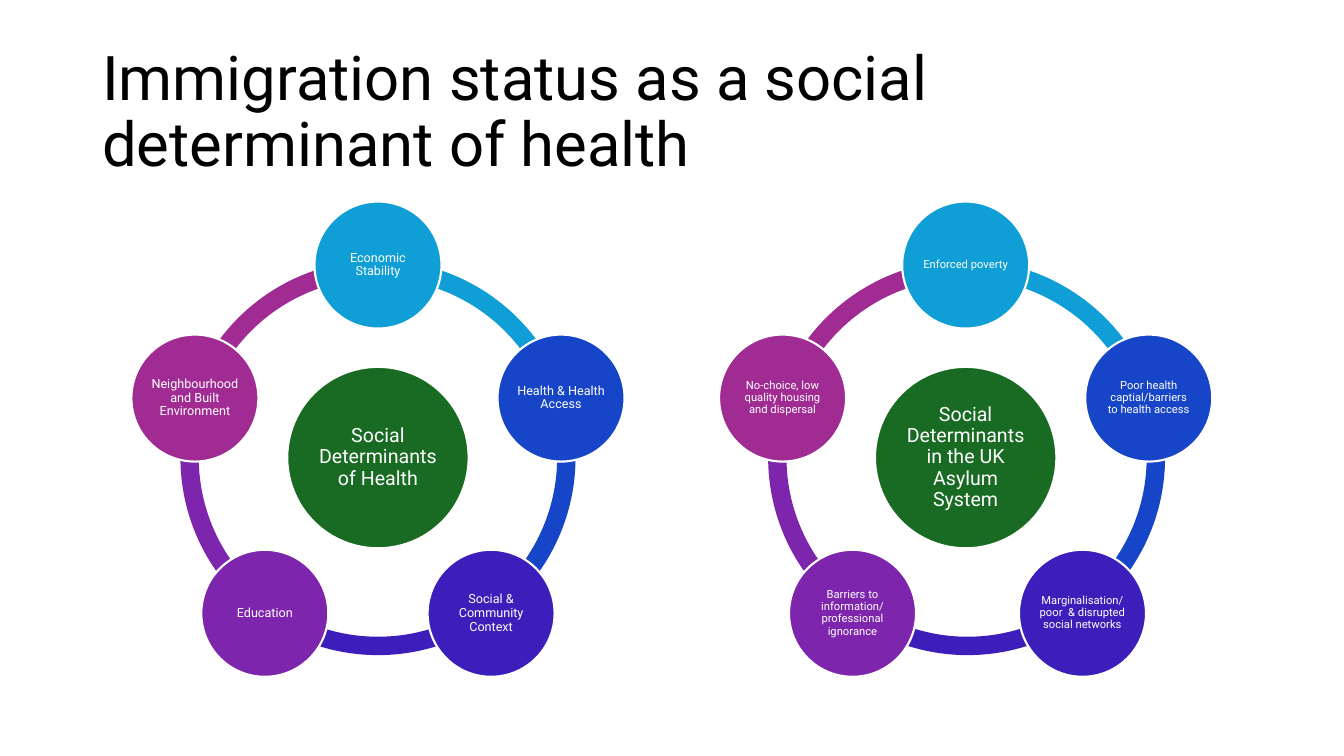
import math
from dataclasses import dataclass

import pptx
import pptx.dml.color
import pptx.enum.shapes
import pptx.enum.text
import pptx.util

Pt = pptx.util.Pt
Shape = pptx.enum.shapes.MSO_SHAPE
Align = pptx.enum.text.PP_ALIGN


@dataclass(frozen=True)
class Theme:
    """Colours, font and type sizes of the slide."""
    font: str = "Roboto"
    title_color: str = "000000"
    light: str = "FFFFFF"
    hub: str = "196B24"
    factors: tuple = ("0F9ED5", "1745C7", "3C1EBA", "7D25AD", "A02B93")
    title_size: int = 44
    hub_size: int = 14


THEME = Theme()
NODE, HUB, RING, ORBIT = 90.7, 129.6, 282.2, 137.5
RING_THICKNESS = 0.0464


def rgb(color):
    """Return a hex string as a colour."""
    return pptx.dml.color.RGBColor.from_string(color)


def write(frame, text, size, color, align):
    """Put one wrapped, vertically centred paragraph in a text frame."""
    frame.word_wrap = True
    frame.vertical_anchor = pptx.enum.text.MSO_ANCHOR.MIDDLE
    paragraph = frame.paragraphs[0]
    paragraph.text = text
    paragraph.alignment = align
    paragraph.line_spacing = 0.9
    paragraph.font.name = THEME.font
    paragraph.font.size = Pt(size)
    paragraph.font.color.rgb = rgb(color)


def add_centred(group, preset, x, y, diameter, color):
    """Add a filled round shape centred on a point."""
    shape = group.shapes.add_shape(
        preset, Pt(x - diameter / 2), Pt(y - diameter / 2), Pt(diameter), Pt(diameter))
    shape.shadow.inherit = False
    shape.fill.solid()
    shape.fill.fore_color.rgb = rgb(color)
    shape.line.fill.background()
    return shape


def add_disc(group, x, y, diameter, color, text, size, inset):
    """Add a white-rimmed circle with centred text."""
    disc = add_centred(group, Shape.OVAL, x, y, diameter, color)
    disc.line.color.rgb = rgb(THEME.light)
    disc.line.width = Pt(1.5)
    frame = disc.text_frame
    frame.margin_left = frame.margin_right = Pt(inset)
    frame.margin_top = frame.margin_bottom = Pt(inset)
    write(frame, text, size, THEME.light, Align.CENTER)


def add_title(slide, left, top, width, height, text):
    """Add the slide title in the given box."""
    title = slide.shapes.add_textbox(Pt(left), Pt(top), Pt(width), Pt(height))
    write(title.text_frame, text, THEME.title_size, THEME.title_color, Align.LEFT)


def add_wheel(slide, left, top, width, hub_text, factors, size, nudges=(0, 0, 0, 0, 0)):
    """Add a hub ringed by factors, clockwise from the top of the given box."""
    wheel = slide.shapes.add_group_shape()
    hub_x, hub_y = left + width / 2, top + NODE / 2 + ORBIT
    count = len(factors)
    angles = [270 + 360 / count * i for i in range(count + 1)]

    for i in reversed(range(count)):
        shift = (nudges[i] + nudges[(i + 1) % count]) / 2
        arc = add_centred(wheel, Shape.BLOCK_ARC, hub_x + shift, hub_y, RING,
                          THEME.factors[i])
        arc.adjustments[0] = angles[i] % 360 * 0.6
        arc.adjustments[1] = angles[i + 1] % 360 * 0.6
        arc.adjustments[2] = RING_THICKNESS

    add_disc(wheel, hub_x, hub_y, HUB, THEME.hub, hub_text, THEME.hub_size, 1.4)
    for factor, angle, color, nudge in zip(factors, angles, THEME.factors, nudges):
        x = hub_x + ORBIT * math.cos(math.radians(angle)) + nudge
        y = hub_y + ORBIT * math.sin(math.radians(angle))
        add_disc(wheel, x, y, NODE, color, factor, size, 0.8)


def main():
    """Build and save the slide."""
    deck = pptx.Presentation()
    deck.slide_width, deck.slide_height = Pt(960), Pt(540)
    slide = deck.slides.add_slide(deck.slide_layouts[6])
    add_title(slide, 66, 28.8, 828, 104.4,
              "Immigration status as a social determinant of health")
    add_wheel(slide, 513.4, 144, 352.8, "Social Determinants in the UK Asylum System", (
        "Enforced poverty",
        "Poor health captial/barriers to health access",
        "Marginalisation/ poor  & disrupted social networks",
        "Barriers to information/ professional ignorance",
        "No-choice, low quality housing and dispersal",
    ), 8, nudges=(0, 0, 2.6, 0, 0))
    add_wheel(slide, 93.6, 144, 352.8, "Social Determinants of Health", (
        "Economic Stability",
        "Health & Health Access",
        "Social & Community Context",
        "Education",
        "Neighbourhood and Built Environment",
    ), 9)
    deck.save("out.pptx")


if __name__ == "__main__":
    main()
